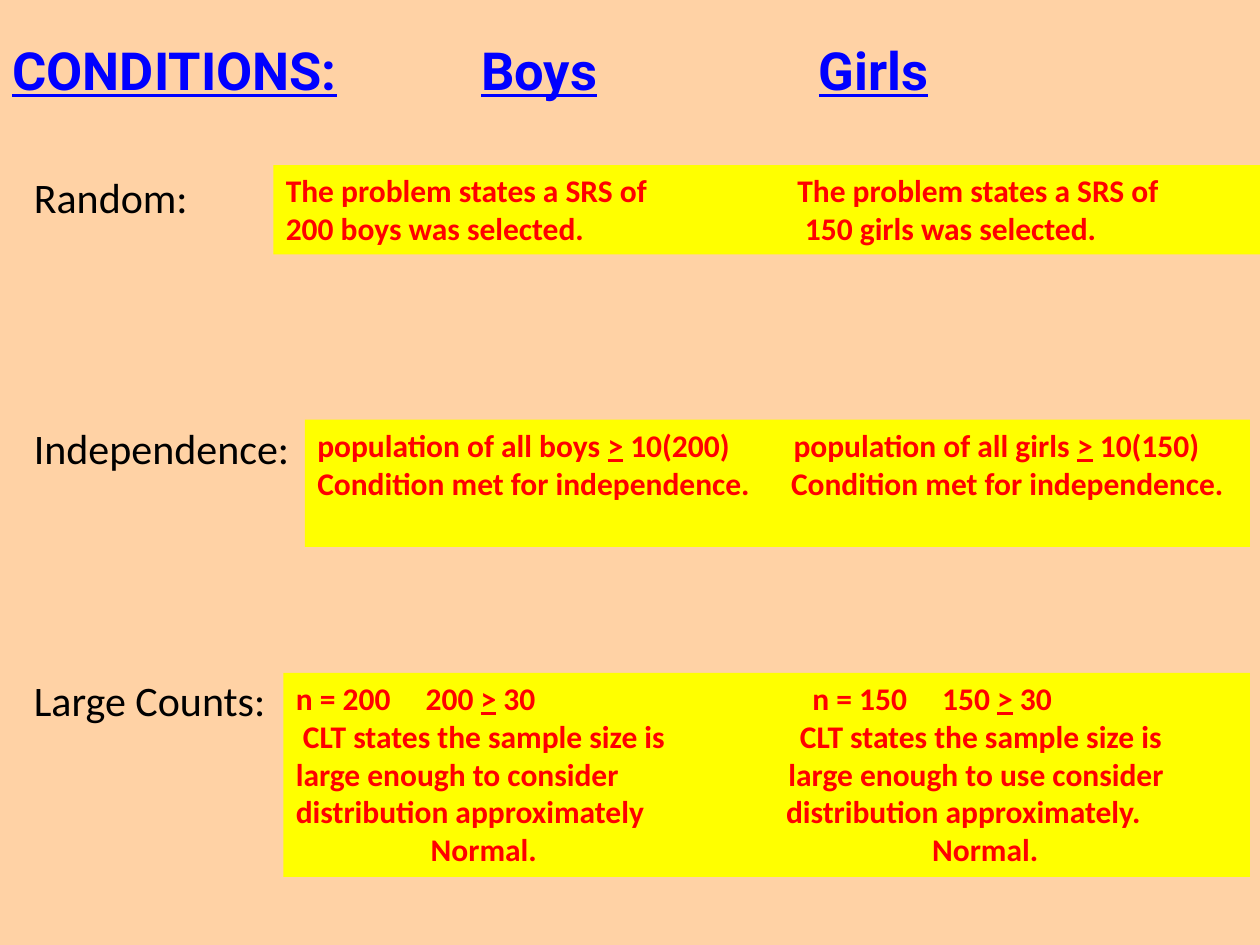
"""Build a slide checking inference conditions for boys and girls."""
import pptx
import pptx.dml.color
import pptx.enum.shapes
import pptx.enum.text
import pptx.util
from lxml import etree
from pptx.oxml.ns import qn

Inches = pptx.util.Inches
RGBColor = pptx.dml.color.RGBColor
PEACH = RGBColor(0xFF, 0xD2, 0xA5)
YELLOW = RGBColor(0xFF, 0xFF, 0x00)
RED = RGBColor(0xFF, 0x00, 0x00)
BLUE = RGBColor(0x00, 0x00, 0xFF)
BLACK = RGBColor(0x00, 0x00, 0x00)

TITLE_FORMAT = {"name": "Roboto", "size": pptx.util.Pt(30), "bold": True, "underline": True}
LABEL_FORMAT = {"name": "Calibri", "size": pptx.util.Pt(24)}
ANSWER_FORMAT = {"name": "Calibri", "size": pptx.util.Pt(18), "bold": True}
FRAME_FORMAT = {
    "word_wrap": True,
    "auto_size": pptx.enum.text.MSO_AUTO_SIZE.NONE,
    "vertical_anchor": pptx.enum.text.MSO_ANCHOR.TOP,
}


def add_run(paragraph, text, font_format, color):
    run = paragraph.add_run()
    run.text = text
    for attribute, value in font_format.items():
        setattr(run.font, attribute, value)
    run.font.color.rgb = color
    return run


def set_tabs(paragraph, stops):
    tab_list = etree.SubElement(paragraph._p.get_or_add_pPr(), qn("a:tabLst"))
    for stop in stops:
        etree.SubElement(tab_list, qn("a:tab"), pos=str(Inches(stop)), algn="l")


presentation = pptx.Presentation()
presentation.slide_width = Inches(10)
presentation.slide_height = Inches(7.5)
slide = presentation.slides.add_slide(presentation.slide_layouts[6])
slide.background.fill.solid()
slide.background.fill.fore_color.rgb = PEACH

heading = slide.shapes.add_textbox(Inches(0), Inches(0.25), Inches(9.33), Inches(0.61))
heading.text_frame.word_wrap = True
heading_line = heading.text_frame.paragraphs[0]
set_tabs(heading_line, [3.72, 6.4])
add_run(heading_line, "CONDITIONS:\tBoys\tGirls", TITLE_FORMAT, BLUE)

conditions = slide.shapes.add_textbox(Inches(0.17), Inches(1.31), Inches(2.25), Inches(4.54))
conditions.text_frame.word_wrap = True
for index, condition in enumerate(["Random:", "Independence:", "Large Counts:"]):
    label = conditions.text_frame.add_paragraph() if index else conditions.text_frame.paragraphs[0]
    label.space_before = pptx.util.Pt(115 if index else 0)
    add_run(label, condition, LABEL_FORMAT, BLACK)

answers = [
    ((2.17, 1.31, 7.83, 0.71), [
        ([4.06], "The problem states a SRS of\tThe problem states a SRS of"),
        ([4.12], "200 boys was selected.\t150 girls was selected."),
    ]),
    ((2.25, 5.34, 7.67, 1.62), [
        ([1.03, 4.1, 5.13], "n = 200\t200 > 30\tn = 150\t150 > 30"),
        ([4.0], " CLT states the sample size is\tCLT states the sample size is"),
        ([3.91], "large enough to consider\tlarge enough to use consider"),
        ([3.89], "distribution approximately\tdistribution approximately."),
        ([1.07, 5.05], "\tNormal.\tNormal."),
    ]),
    ((2.42, 3.33, 7.5, 1.01), [
        ([3.78], "population of all boys > 10(200)\tpopulation of all girls > 10(150)"),
        ([3.76], "Condition met for independence.\tCondition met for independence."),
    ]),
]
for bounds, lines in answers:
    answer = slide.shapes.add_shape(
        pptx.enum.shapes.MSO_SHAPE.RECTANGLE, *[Inches(length) for length in bounds])
    answer.shadow.inherit = False
    answer.fill.solid()
    answer.fill.fore_color.rgb = YELLOW
    answer.line.fill.background()
    for attribute, value in FRAME_FORMAT.items():
        setattr(answer.text_frame, attribute, value)
    for index, (stops, wording) in enumerate(lines):
        line = answer.text_frame.add_paragraph() if index else answer.text_frame.paragraphs[0]
        line.alignment = pptx.enum.text.PP_ALIGN.LEFT
        set_tabs(line, stops)
        for position, part in enumerate(wording.split(">")):
            if position:
                add_run(line, ">", ANSWER_FORMAT, RED).font.underline = True
            add_run(line, part, ANSWER_FORMAT, RED)

presentation.save("out.pptx")
